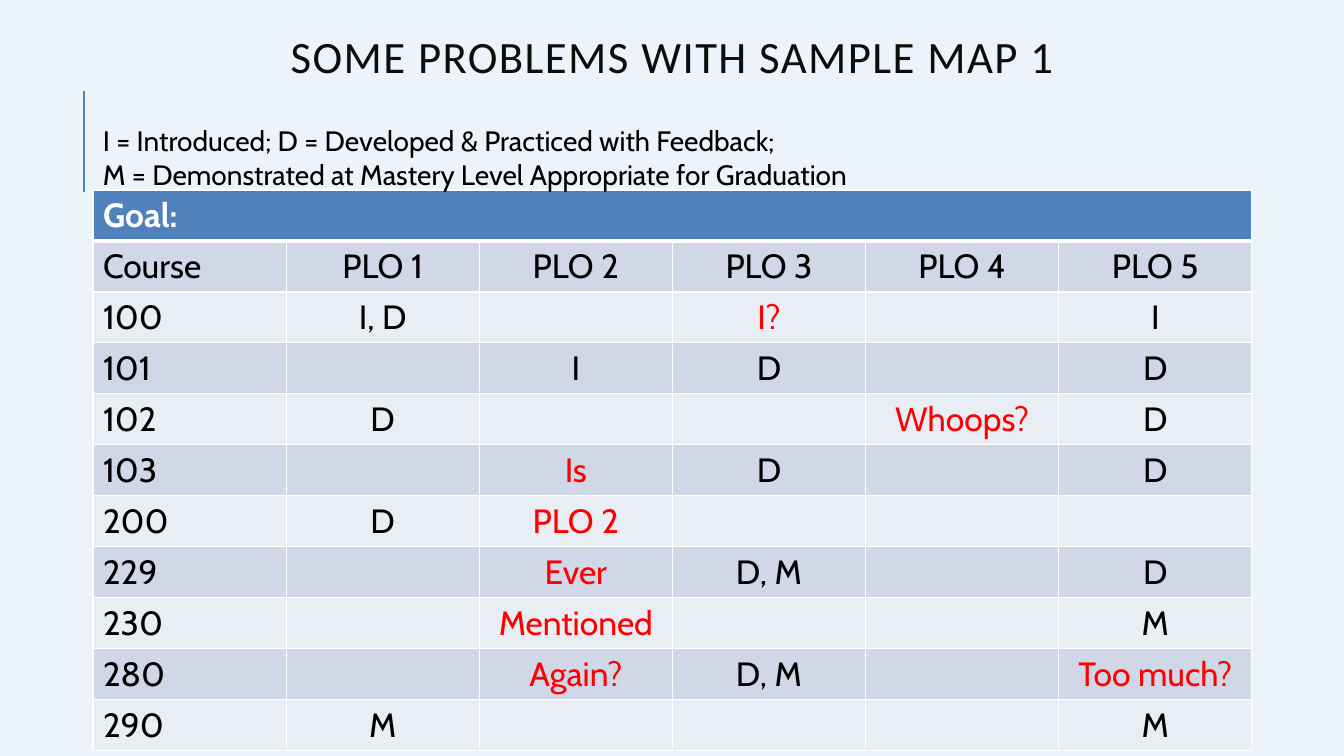
from lxml.etree import SubElement
from pptx import Presentation
from pptx.dml.color import RGBColor
from pptx.enum.shapes import MSO_CONNECTOR
from pptx.enum.text import MSO_ANCHOR, MSO_AUTO_SIZE, PP_ALIGN
from pptx.oxml.ns import qn
from pptx.util import Emu, Pt

THEME = {
    "background": "EDF3FB", "accent": "4F81BD", "white": "FFFFFF",
    "title": "0D0D0D", "text": "000000", "remark": "FF0000",
    "bands": ("D0D8E8", "E9EDF4"),
    "title_font": "Calibri", "body_font": "Cabin",
    "title_size": 32, "table_size": 24, "legend_size": 20,
}
EMU_PER_PX = 914400 / 100.8
LEFT, WIDTH = 93, 1159
TABLE_TOP, ROW_HEIGHT = 190, 50

OUTCOMES = ["PLO 1", "PLO 2", "PLO 3", "PLO 4", "PLO 5"]
LEVELS = {
    "100": ["I, D", "", "", "", "I"],
    "101": ["", "I", "D", "", "D"],
    "102": ["D", "", "", "", "D"],
    "103": ["", "", "D", "", "D"],
    "200": ["D", "", "", "", ""],
    "229": ["", "", "D, M", "", "D"],
    "230": ["", "", "", "", "M"],
    "280": ["", "", "D, M", "", ""],
    "290": ["M", "", "", "", "M"],
}
REMARKS = {
    ("100", "PLO 3"): "I?",
    ("102", "PLO 4"): "Whoops?",
    ("103", "PLO 2"): "Is",
    ("200", "PLO 2"): "PLO 2",
    ("229", "PLO 2"): "Ever",
    ("230", "PLO 2"): "Mentioned",
    ("280", "PLO 2"): "Again?",
    ("280", "PLO 5"): "Too much?",
}


def px(*lengths):
    return [Emu(round(length * EMU_PER_PX)) for length in lengths]


def write(frame, text, size, color, font="body_font", align=PP_ALIGN.LEFT, bold=False):
    """Fill a text frame with one paragraph in theme type and colour."""
    frame.text = text
    paragraph = frame.paragraphs[0]
    paragraph.alignment = align
    for run in paragraph.runs:
        formats = {"name": THEME[font], "size": Pt(THEME[size]), "bold": bold}
        for attribute, value in formats.items():
            setattr(run.font, attribute, value)
        run.font.color.rgb = RGBColor.from_string(THEME[color])


deck = Presentation()
deck.slide_width, deck.slide_height = px(1344, 756)
slide = deck.slides.add_slide(deck.slide_layouts[5])
slide.background.fill.solid()
slide.background.fill.fore_color.rgb = RGBColor.from_string(THEME["background"])

# Accent rule beside the legend
rule = slide.shapes.add_connector(MSO_CONNECTOR.STRAIGHT, *px(84, 192, 84, 91))
rule.line.color.rgb = RGBColor.from_string(THEME["accent"])
rule.line.width = Pt(1.5)
SubElement(rule._element.spPr, qn("a:effectLst"))

# Title
title = slide.shapes.title
title.left, title.top, title.width, title.height = px(LEFT, 3, WIDTH, 116)
write(title.text_frame, "SOME PROBLEMS WITH SAMPLE MAP 1", "title_size", "title",
      font="title_font", align=PP_ALIGN.CENTER)
title.text_frame.auto_size = MSO_AUTO_SIZE.NONE
title.text_frame.vertical_anchor = MSO_ANCHOR.MIDDLE
title.text_frame.paragraphs[0].line_spacing = 0.8
title.text_frame.paragraphs[0].runs[0].font._element.set("spc", "100")

# Curriculum map: goal row, heading row, then one row per course
rows = [["Goal:"] + [""] * len(OUTCOMES), ["Course"] + OUTCOMES]
rows += [[course] + levels for course, levels in LEVELS.items()]
curriculum = slide.shapes.add_table(
    len(rows), len(rows[0]), *px(LEFT, TABLE_TOP, WIDTH, ROW_HEIGHT * len(rows))).table
curriculum.horz_banding = False
for row_index, row in enumerate(rows):
    is_goal = row_index == 0
    curriculum.rows[row_index].height = px(ROW_HEIGHT)[0]
    fill = THEME["accent"] if is_goal else THEME["bands"][(row_index - 1) % 2]
    for column, level in enumerate(row):
        cell = curriculum.cell(row_index, column)
        remark = REMARKS.get((row[0], rows[1][column]))
        color = "white" if is_goal else "remark" if remark else "text"
        write(cell.text_frame, remark or level, "table_size", color, bold=is_goal,
              align=PP_ALIGN.CENTER if column else PP_ALIGN.LEFT)
        borders = {"a:lnL": 1, "a:lnR": 1,
                   "a:lnT": 3 if row_index == 1 else 1, "a:lnB": 3 if is_goal else 1}
        for side, points in borders.items():
            border = SubElement(cell._tc.get_or_add_tcPr(), qn(side), w=str(Pt(points)))
            SubElement(SubElement(border, qn("a:solidFill")), qn("a:srgbClr"),
                       val=THEME["white"])
        cell.fill.solid()
        cell.fill.fore_color.rgb = RGBColor.from_string(fill)
curriculum.cell(0, 0).merge(curriculum.cell(0, len(OUTCOMES)))

# Legend for the level letters
legend = slide.shapes.add_textbox(*px(LEFT, 119, WIDTH, 78)).text_frame
legend.word_wrap = True
write(legend, "I = Introduced; D = Developed & Practiced with Feedback;\v"
      "M = Demonstrated at Mastery Level Appropriate for Graduation",
      "legend_size", "text")

deck.save("out.pptx")
